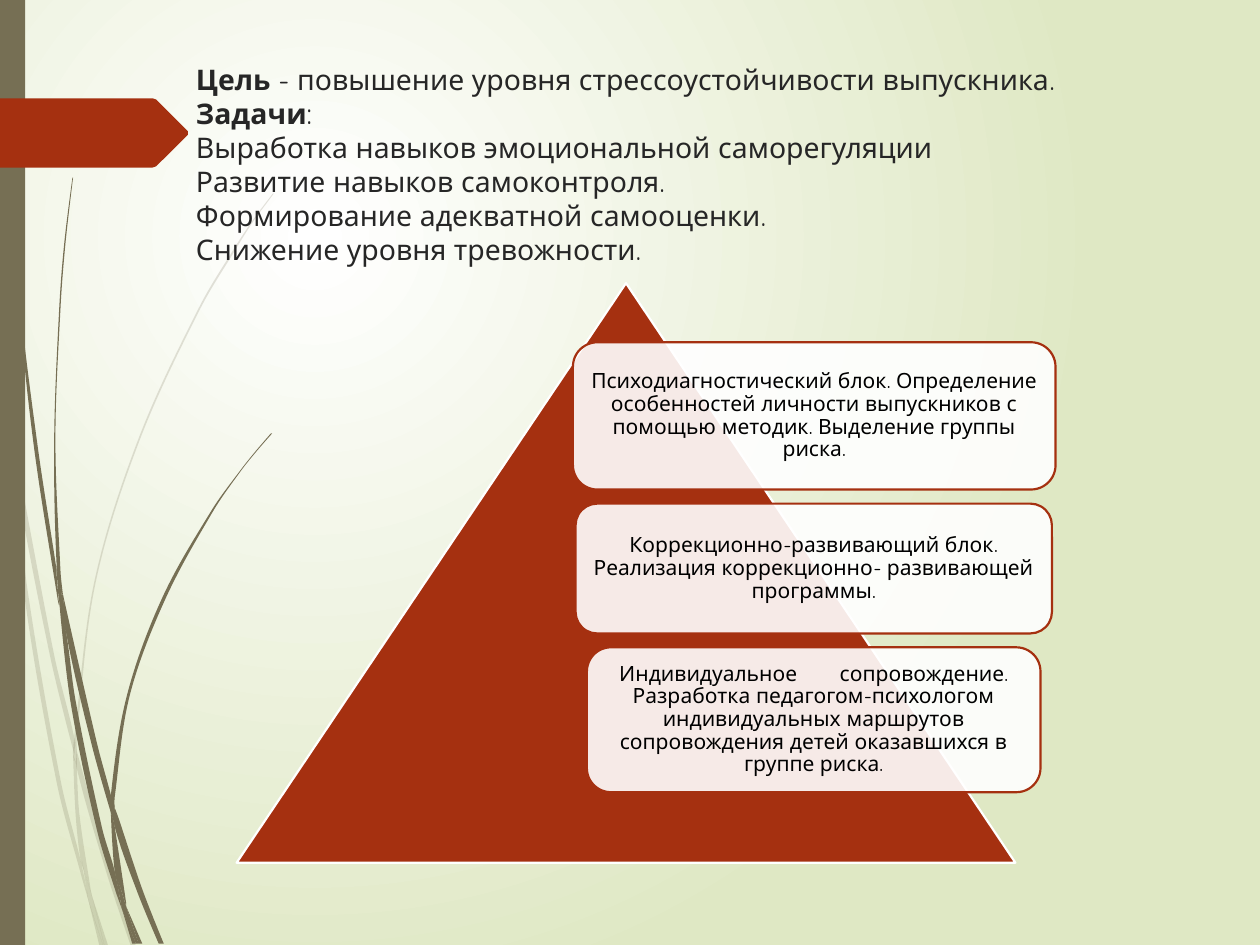
from math import cos, dist, radians

from lxml.etree import SubElement
from pptx import Presentation
from pptx.dml.color import RGBColor
from pptx.enum.shapes import MSO_SHAPE
from pptx.enum.text import MSO_ANCHOR, MSO_AUTO_SIZE, PP_ALIGN
from pptx.oxml import parse_xml
from pptx.oxml.ns import nsdecls, qn
from pptx.util import Pt

COLORS = {"red": "A53010", "olive": "766F54", "white": "FFFFFF", "meadow": "DFE8C4",
          "title": "262626", "black": "000000"}
FONT = "Quicksand"
UNIT = 0.72  # points in one step of the outline grid below

FAINT_WISPS = [
    [(8, 350), (6, 322), (0, 282), (0, 299), (7, 344)],
    [(40, 522), (59, 599), (59, 586), (43, 520), (10, 345), (12, 376)],
    [(64, 607), (61, 596), (61, 610), (85, 694), (104, 751), (108, 751), (88, 692)],
    [(83, 751), (86, 751), (73, 711)],
    [(64, 683), (48, 619), (22, 469), (12, 376), (8, 350), (19, 470), (45, 621),
     (64, 693), (70, 714), (69, 707)],
    [(58, 599), (60, 646), (64, 683), (67, 692), (73, 711), (72, 706), (63, 646),
     (61, 610), (61, 608)],
    [(61, 584), (76, 462), (111, 349), (159, 245), (187, 198), (201.3, 175.3),
     (217, 154), (217, 153), (200.7, 174.7), (186, 197), (158, 244), (110, 348),
     (75, 461), (59, 584), (59, 586), (61, 596)],
    [(70, 714), (79, 751), (82, 751)],
    [(61, 608), (61, 610), (61, 596), (59, 586), (58, 599)],
    [(67, 692), (65, 683), (69, 707), (70, 714), (82, 751), (83, 751), (73, 711)],
]
DARK_WISPS = [
    [(5, 110), (14, 233), (27, 355), (46, 477), (47, 481), (45, 457), (45, 453),
     (30, 355), (15, 232), (6, 109), (4, 48), (3, 0), (2, 0), (3, 48)],
    [(73, 592), (88, 645), (88, 633), (88, 631), (77, 590), (50, 472), (53, 505)],
    [(94, 649), (91, 641), (91, 656), (109, 708), (126, 749), (130, 749), (113, 706)],
    [(91, 691), (81, 657), (60, 556), (53, 505), (47, 477), (56, 557), (77, 659),
     (92, 708), (97, 722), (96, 717)],
    [(50, 472), (48, 453), (44, 349), (48, 245), (52, 193), (58, 141), (57.5, 141),
     (51, 193), (47, 245), (43, 349), (45, 449), (49, 472)],
    [(110, 749), (113, 749), (100, 719)],
    [(47, 477), (53, 505), (50, 472), (49, 472), (45, 449), (45, 453)],
    [(91, 633), (103, 552), (131, 476), (169, 406), (191, 374), (203, 359), (216, 344),
     (215, 344), (203, 358), (191, 373), (168, 405), (129, 474), (101, 551), (88, 631),
     (91, 641)],
    [(97, 722), (105, 749), (108, 749)],
    [(88, 645), (91, 691), (96, 706), (100, 719), (100, 716), (91, 656), (90, 651)],
    [(88, 645), (90, 651), (91, 656), (91, 641), (88, 631), (88, 633)],
    [(96, 706), (91, 691), (96, 717), (97, 722), (108, 749), (110, 749), (100, 719)],
]
ARROW = [(149, 107), (124, 132), (121, 133), (0, 133), (0, 78), (121, 78), (124, 79),
         (149, 104)]

TITLE_LINES = [
    [("Цель ", True), ("- повышение уровня стрессоустойчивости выпускника.", False)],
    [("Задачи", True), (":", False)],
    [("Выработка навыков эмоциональной саморегуляции", False)],
    [("Развитие навыков самоконтроля.", False)],
    [("Формирование адекватной самооценки.", False)],
    [("Снижение уровня тревожности.", False)],
]
# Box of each card, as offset from the triangle's corner and size, then its text
CARDS = [
    ((192.2, 33.8, 275.8, 84.2), "Психодиагностический блок. Определение особенностей "
     "личности выпускников с помощью методик. Выделение группы риска."),
    ((193.7, 126, 272.2, 74.2), "Коррекционно-развивающий блок. Реализация "
     "коррекционно- развивающей программы."),
    ((200.2, 208.1, 259.2, 82.8), "Индивидуальное\tсопровождение. Разработка "
     "педагогом-психологом индивидуальных маршрутов сопровождения детей оказавшихся "
     "в группе риска."),
]


def rgb(name):
    return RGBColor.from_string(COLORS[name])


def set_all(obj, values):
    for name, value in values.items():
        setattr(obj, name, value)


def paint(sp, fill, line=None, alpha=None):
    sp.shadow.inherit = False
    sp.fill.solid()
    sp.fill.fore_color.rgb = rgb(fill)
    if alpha:
        clr = sp.fill._xPr.find(".//" + qn("a:srgbClr"))
        SubElement(clr, qn("a:alpha")).set("val", str(alpha * 1000))
    if line:
        sp.line.color.rgb = rgb(line)
        sp.line.width = Pt(1.25)
    else:
        sp.line.fill.background()


def add_run(p, text, size, color, bold=False):
    r = p.add_run()
    r.text = text
    set_all(r.font, {"name": FONT, "size": Pt(size), "bold": bold})
    r.font.color.rgb = rgb(color)


def tangent(before, point, after):
    """Unit direction of a smooth outline at a point, or zero at a sharp corner."""
    (ax, ay), (x, y), (bx, by) = before, point, after
    turn = (x - ax) * (bx - x) + (y - ay) * (by - y)
    chord = dist(before, after)
    if not chord or turn < dist(before, point) * dist(point, after) * cos(radians(45)):
        return 0, 0
    return (bx - ax) / chord, (by - ay) / chord


def curve_sides(sp, points):
    """Turn the straight sides of a closed freeform into cubic curves."""
    n = len(points)
    tangents = [tangent(points[i - 1], points[i], points[(i + 1) % n]) for i in range(n)]
    left, top = (min(axis) for axis in zip(*points))
    for i, side in enumerate(sp._element.findall(".//" + qn("a:lnTo"))):
        j = (i + 1) % n
        reach = dist(points[i], points[j]) / 3
        (x1, y1), (x2, y2) = points[i], points[j]
        (u1, v1), (u2, v2) = tangents[i], tangents[j]
        controls = [(x1 + u1 * reach, y1 + v1 * reach),
                    (x2 - u2 * reach, y2 - v2 * reach), (x2, y2)]
        pts = "".join(f'<a:pt x="{round(x - left)}" y="{round(y - top)}"/>'
                      for x, y in controls)
        side.getparent().replace(side, parse_xml(
            f'<a:cubicBezTo {nsdecls("a")}>{pts}</a:cubicBezTo>'))


def add_outline(shapes, grid, fill, alpha=None, curved=False):
    points = [(Pt(x * UNIT), Pt(y * UNIT)) for x, y in grid]
    builder = shapes.build_freeform(*points[0])
    builder.add_line_segments(points[1:] + points[:1], close=True)
    sp = builder.convert_to_shape()
    if curved:
        curve_sides(sp, points)
    paint(sp, fill, alpha=alpha)


def add_background(s):
    s.background.fill.solid()
    solid = s._element.find(".//" + qn("a:solidFill"))
    stops = "".join(f'<a:gs pos="{pos}"><a:srgbClr val="{COLORS[name]}"/></a:gs>'
                    for pos, name in ((0, "white"), (100000, "meadow")))
    solid.getparent().replace(solid, parse_xml(
        f'<a:gradFill {nsdecls("a")} rotWithShape="1"><a:gsLst>{stops}</a:gsLst>'
        '<a:path path="circle"><a:fillToRect l="50000" t="50000" r="100000" b="100000"/>'
        '</a:path></a:gradFill>'))


def add_decoration(s, height):
    """Wisps, side bar and arrow along the left edge."""
    for wisps, alpha in ((FAINT_WISPS, 20), (DARK_WISPS, None)):
        group = s.shapes.add_group_shape()
        for wisp in wisps:
            add_outline(group.shapes, wisp, "olive", alpha, curved=True)
    bar = s.shapes.add_shape(MSO_SHAPE.RECTANGLE, 0, 0, Pt(14.4), Pt(height))
    paint(bar, "olive")
    add_outline(s.shapes, ARROW, "red")


def add_title(s, x, y, w, h):
    sp = s.shapes.title
    set_all(sp, {"left": Pt(x), "top": Pt(y), "width": Pt(w), "height": Pt(h)})
    s.shapes._spTree.append(sp._element)
    tf = sp.text_frame
    set_all(tf, {"word_wrap": True, "vertical_anchor": MSO_ANCHOR.TOP,
                 "auto_size": MSO_AUTO_SIZE.NONE})
    p = tf.paragraphs[0]
    set_all(p, {"alignment": PP_ALIGN.LEFT, "line_spacing": 1.0})
    for i, line in enumerate(TITLE_LINES):
        if i:
            p.add_line_break()
        for text, bold in line:
            add_run(p, text, 16.2, "title", bold)


def add_card(shapes, x, y, w, h, text):
    sp = shapes.add_shape(MSO_SHAPE.ROUNDED_RECTANGLE, Pt(x), Pt(y), Pt(w), Pt(h))
    paint(sp, "white", "red", 90)
    tf = sp.text_frame
    set_all(tf, {"word_wrap": True, "vertical_anchor": MSO_ANCHOR.MIDDLE})
    set_all(tf, {f"margin_{side}": Pt(3.6) for side in ("left", "top", "right", "bottom")})
    p = tf.paragraphs[0]
    set_all(p, {"alignment": PP_ALIGN.CENTER, "line_spacing": 0.9})
    if "\t" in text:
        p._p.get_or_add_pPr().append(parse_xml(
            f'<a:tabLst {nsdecls("a")}><a:tab pos="{Pt(126)}" algn="l"/></a:tabLst>'))
    add_run(p, text, 12, "black")


def add_pyramid(s, x, y, w, h):
    shapes = s.shapes.add_group_shape().shapes
    triangle = shapes.add_shape(MSO_SHAPE.ISOSCELES_TRIANGLE, Pt(x), Pt(y), Pt(w), Pt(h))
    paint(triangle, "red", "white")
    for (dx, dy, card_w, card_h), text in CARDS:
        add_card(shapes, x + dx, y + dy, card_w, card_h, text)


prs = Presentation()
set_all(prs, {"slide_width": Pt(720), "slide_height": Pt(540)})
s = prs.slides.add_slide(prs.slide_layouts[5])
add_background(s)
add_decoration(s, 540)
add_title(s, 104.8, 31.7, 583.9, 100.8)
add_pyramid(s, 135.2, 161.8, 445, 331.2)
prs.save("out.pptx")
